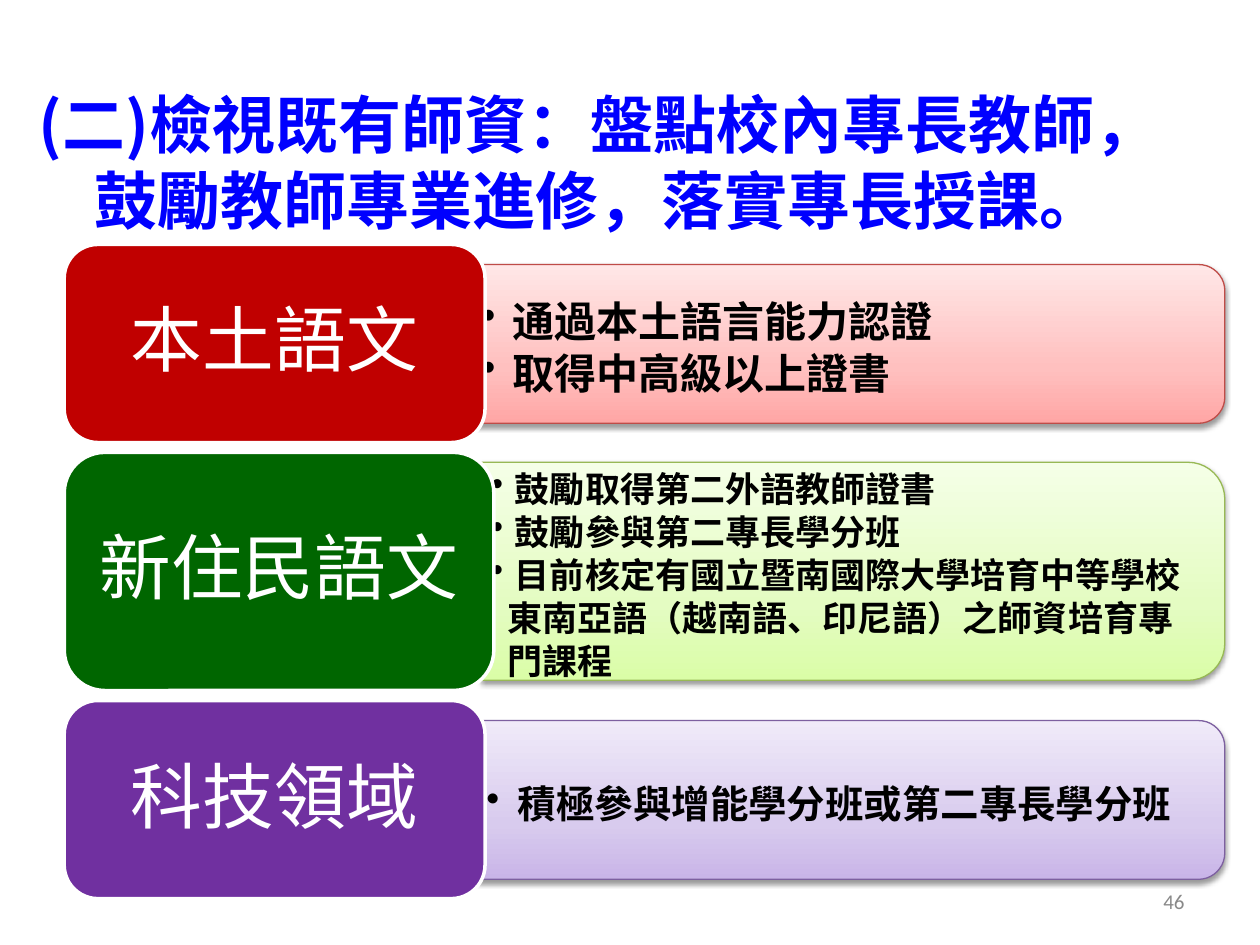
"""Build the slide on teacher expertise with three label-and-detail rows."""
from copy import deepcopy
from math import cos, radians, sin

from lxml import etree
from pptx import Presentation
from pptx.dml.color import RGBColor
from pptx.enum.shapes import MSO_SHAPE
from pptx.enum.text import MSO_ANCHOR, MSO_AUTO_SIZE, PP_ALIGN
from pptx.oxml.ns import qn
from pptx.util import Pt

ROUNDED = MSO_SHAPE.ROUNDED_RECTANGLE
TOP, MIDDLE = MSO_ANCHOR.TOP, MSO_ANCHOR.MIDDLE
LEFT, CENTER, RIGHT = PP_ALIGN.LEFT, PP_ALIGN.CENTER, PP_ALIGN.RIGHT
FIT_SHAPE, NO_FIT = MSO_AUTO_SIZE.SHAPE_TO_FIT_TEXT, MSO_AUTO_SIZE.NONE
CJK_FONT = "Noto Sans CJK SC"
COLORS = {"title": "0000FF", "text": "000000", "white": "FFFFFF", "number": "898989"}
STOP_POSITIONS = (0, 0.35, 1)
TITLE_LINES = [("(二)檢視既有師資：盤點校內專長教師，", 0), ("鼓勵教師專業進修，落實專長授課。", 32)]
ROWS = [
    {"label": "本土語文", "label_box": (36.7, 139.7, 240.5, 113.2), "label_fill": "C00000",
     "panel_box": (269.3, 151.2, 430.6, 90.7), "radius": 15, "line": "BF4C48",
     "stops": ("FFA6A5", "FFC0BF", "FFE7E7"), "size": 24, "hanging": 18,
     "bullets": ["通過本土語言能力認證", "取得中高級以上證書"], "continued": []},
    {"label": "新住民語文", "label_box": (36.7, 258.5, 245.5, 136.1), "label_fill": "006600",
     "panel_box": (275, 264.2, 424.9, 124.6), "radius": 21, "line": "98B955",
     "stops": ("DAFDA7", "E4FCC2", "F5FFE7"), "size": 20, "hanging": 13.5,
     "bullets": ["鼓勵取得第二外語教師證書", "鼓勵參與第二專長學分班",
                 "目前核定有國立暨南國際大學培育中等學校"],
     "continued": ["東南亞語（越南語、印尼語）之師資培育專", "門課程"]},
    {"label": "科技領域", "label_box": (36.7, 400.3, 240.5, 113.2), "label_fill": "7030A0",
     "panel_box": (272.2, 411.8, 427.7, 90.7), "radius": 15, "line": "7D60A0",
     "stops": ("C9B5E8", "D8CBEE", "F0EAF9"), "size": 22, "hanging": 18,
     "bullets": ["積極參與增能學分班或第二專長學分班"], "continued": []},
]


def set_frame(frame, anchor, margins, wrap=True):
    settings = {"vertical_anchor": anchor, "word_wrap": wrap, "auto_size": NO_FIT}
    sides = ("margin_left", "margin_top", "margin_right", "margin_bottom")
    settings.update(zip(sides, map(Pt, margins)))
    for name, value in settings.items():
        setattr(frame, name, value)


def write(paragraph, text, size, color, bold=False, align=LEFT, font=CJK_FONT):
    paragraph.alignment = align
    run = paragraph.add_run()
    run.text = text
    for name, value in {"size": Pt(size), "bold": bold, "name": font}.items():
        setattr(run.font, name, value)
    run.font.color.rgb = RGBColor.from_string(color)
    etree.SubElement(run.font._element, qn("a:ea"), typeface=font)


presentation = Presentation()
presentation.slide_width, presentation.slide_height = Pt(720), Pt(540)
slide = presentation.slides.add_slide(presentation.slide_layouts[5])
shapes = slide.shapes

title = shapes.title
title.left, title.top, title.width, title.height = map(Pt, (15, 39.6, 669, 94.3))
frame = title.text_frame
set_frame(frame, TOP, (7.2, 9.6, 7.2, 0), wrap=False)
frame.auto_size = FIT_SHAPE
for index, (text, indent) in enumerate(TITLE_LINES):
    paragraph = frame.add_paragraph() if index else frame.paragraphs[0]
    paragraph._p.get_or_add_pPr().set("marL", str(Pt(indent)))
    paragraph.line_spacing, paragraph.space_before = Pt(43), Pt(0)
    write(paragraph, text, 36, COLORS["title"], bold=True)

number = shapes.add_textbox(*map(Pt, (516.2, 500.4, 167.8, 28.8)))
set_frame(number.text_frame, MIDDLE, (7.2, 3.6, 7.2, 3.6))
write(number.text_frame.paragraphs[0], "46", 12, COLORS["number"], align=RIGHT, font="Calibri")

for row in ROWS:
    left, top, width, height = row["panel_box"]
    right, bottom, radius = left + width, top + height, row["radius"]
    points = [(left, top)]
    for center_y, start in ((top + radius, -90), (bottom - radius, 0)):
        for angle in range(start, start + 91, 9):
            points.append((right - radius + radius * cos(radians(angle)),
                           center_y + radius * sin(radians(angle))))
    points.append((left, bottom))
    outline = [(Pt(x), Pt(y)) for x, y in points]
    builder = shapes.build_freeform(*outline[0], scale=1.0)
    builder.add_line_segments(outline[1:], close=True)
    panel = builder.convert_to_shape()

    panel.fill.gradient()
    panel.fill.gradient_angle = 90
    stop_list = panel._element.spPr.find(".//" + qn("a:gsLst"))
    stop_list.insert(1, deepcopy(stop_list[0]))
    for stop, position, color in zip(panel.fill.gradient_stops, STOP_POSITIONS, row["stops"]):
        stop.position = position
        stop.color.rgb = RGBColor.from_string(color)
    panel.line.color.rgb = RGBColor.from_string(row["line"])
    panel.line.width = Pt(0.75)
    panel.shadow.inherit = False
    effects = panel._element.spPr.find(qn("a:effectLst"))
    shadow = etree.SubElement(effects, qn("a:outerShdw"), blurRad=str(Pt(3.1)),
                              dist=str(Pt(1.6)), dir="5400000", rotWithShape="0")
    shadow_color = etree.SubElement(shadow, qn("a:srgbClr"), val=COLORS["text"])
    etree.SubElement(shadow_color, qn("a:alpha"), val="38000")

    frame, size = panel.text_frame, row["size"]
    set_frame(frame, MIDDLE, (5.8, 6, 10, 0))
    for index, text in enumerate(row["bullets"] + row["continued"]):
        paragraph = frame.add_paragraph() if index else frame.paragraphs[0]
        paragraph.line_spacing, paragraph.space_after = Pt(size * 1.08), Pt(size * 0.15)
        properties = paragraph._p.get_or_add_pPr()
        if index < len(row["bullets"]):
            properties.set("marL", str(Pt(row["hanging"])))
            properties.set("indent", str(-Pt(row["hanging"])))
            etree.SubElement(properties, qn("a:buChar"), char="•")
        else:
            properties.set("marL", str(Pt(9)))
        write(paragraph, text, size, COLORS["text"], bold=True)

    label = shapes.add_shape(ROUNDED, *map(Pt, row["label_box"]))
    label.adjustments[0] = 0.17
    label.shadow.inherit = False
    label.fill.solid()
    label.fill.fore_color.rgb = RGBColor.from_string(row["label_fill"])
    label.line.color.rgb = RGBColor.from_string(COLORS["white"])
    label.line.width = Pt(2)
    set_frame(label.text_frame, MIDDLE, (6, 0, 6, 6))
    write(label.text_frame.paragraphs[0], row["label"], 41, COLORS["white"], align=CENTER)

presentation.save("out.pptx")
